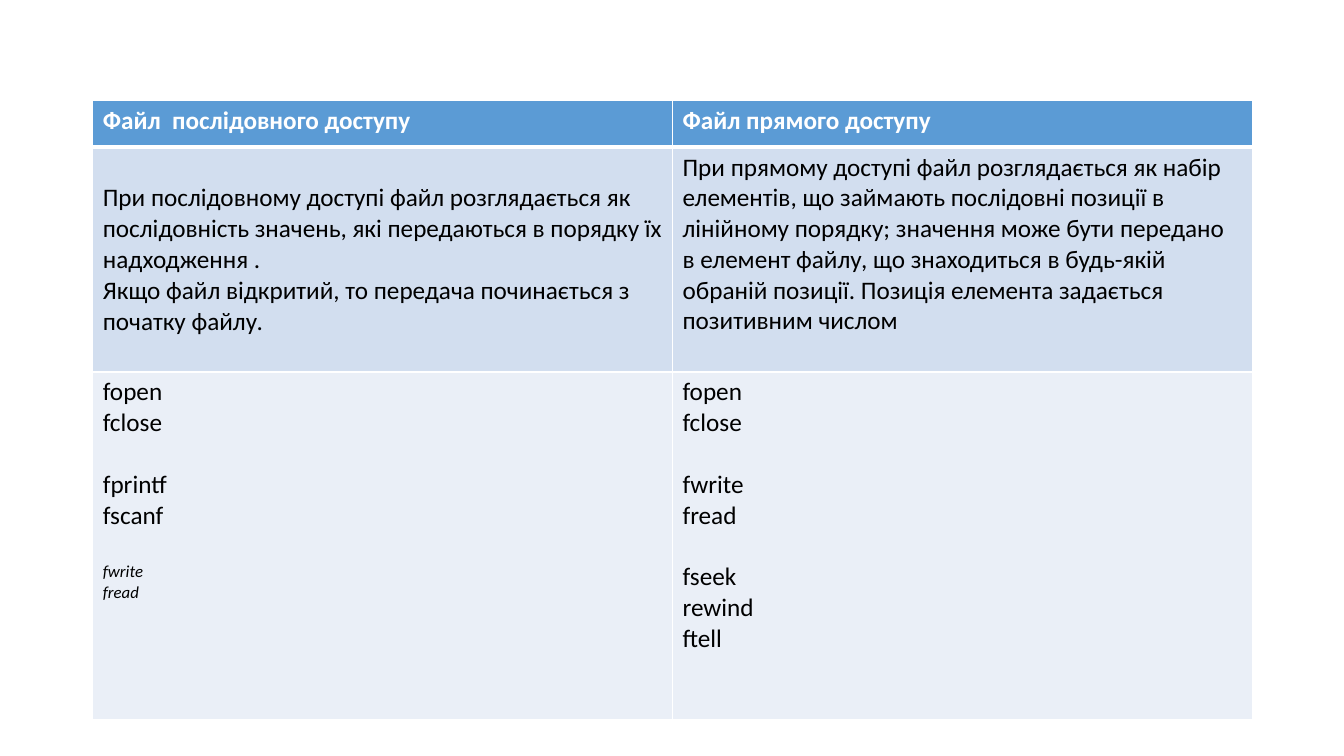
import pptx
import pptx.dml.color
import pptx.oxml
import pptx.oxml.ns
import pptx.util
from pptx.util import Inches

HEADINGS = ["Файл  послідовного доступу", "Файл прямого доступу"]
DESCRIPTIONS = [
    [["При послідовному доступі файл розглядається як послідовність значень, "
      "які передаються в порядку їх надходження .",
      "Якщо файл відкритий, то передача починається з початку файлу."]],
    [["При прямому доступі файл розглядається як набір елементів, що займають "
      "послідовні позиції в лінійному порядку; значення може бути передано в "
      "елемент файлу, що знаходиться в будь-якій обраній позиції. Позиція "
      "елемента задається позитивним числом"]],
]
FUNCTIONS = [
    [["fopen", "fclose"], ["fprintf", "fscanf"], ["fwrite", "fread"]],
    [["fopen", "fclose"], ["fwrite", "fread"], ["fseek", "rewind", "ftell"]],
]
ROWS = [
    ([[[heading]] for heading in HEADINGS], 0.46, "5B9BD5"),
    (DESCRIPTIONS, 2.23, "D2DEEF"),
    (FUNCTIONS, 3.45, "EAEFF7"),
]
LEFT, TOP, COLUMN_WIDTH = 0.92, 1, 5.75
LINE_GAP = 22


def rgb(value):
    return pptx.dml.color.RGBColor.from_string(value)


def write(paragraph, text, size=18, color="000000", bold=False, italic=False, before=0):
    paragraph.space_before = pptx.util.Pt(before)
    run = paragraph.add_run()
    run.text = text
    run.font.name = "Calibri"
    run.font.size = pptx.util.Pt(size)
    run.font.color.rgb = rgb(color)
    run.font.bold = bold
    run.font.italic = italic


def set_borders(cell, widths, color="FFFFFF"):
    properties = cell._tc.get_or_add_tcPr()
    for side, width in widths.items():
        properties.append(pptx.oxml.parse_xml(
            f'<a:ln{side} {pptx.oxml.ns.nsdecls("a")} w="{pptx.util.Pt(width)}">'
            f'<a:solidFill><a:srgbClr val="{color}"/></a:solidFill></a:ln{side}>'))


def write_groups(cell, groups, header, small_group):
    frame = cell.text_frame
    frame.word_wrap = True
    paragraph = frame.paragraphs[0]
    for group_index, group in enumerate(groups):
        small = group_index == small_group
        for line_index, line in enumerate(group):
            if group_index or line_index:
                paragraph = frame.add_paragraph()
            write(paragraph, line, size=12 if small else 18,
                  color="FFFFFF" if header else "000000", bold=header, italic=small,
                  before=LINE_GAP if group_index and not line_index else 0)


def main():
    deck = pptx.Presentation()
    deck.slide_width, deck.slide_height = Inches(13.33), Inches(7.5)
    slide = deck.slides.add_slide(deck.slide_layouts[6])
    access_table = slide.shapes.add_table(
        len(ROWS), len(HEADINGS), Inches(LEFT), Inches(TOP),
        Inches(COLUMN_WIDTH * len(HEADINGS)),
        Inches(sum(height for _, height, _ in ROWS))).table
    access_table.first_row = access_table.horz_banding = False
    for column in access_table.columns:
        column.width = Inches(COLUMN_WIDTH)

    for row_index, (contents, height, fill) in enumerate(ROWS):
        access_table.rows[row_index].height = Inches(height)
        for column_index, groups in enumerate(contents):
            cell = access_table.cell(row_index, column_index)
            set_borders(cell, {"L": 1, "R": 1, "T": 3 if row_index == 1 else 1,
                               "B": 3 if row_index == 0 else 1})
            cell.fill.solid()
            cell.fill.fore_color.rgb = rgb(fill)
            sequential_functions = contents is FUNCTIONS and column_index == 0
            write_groups(cell, groups, row_index == 0, 2 if sequential_functions else None)
    access_table.cell(1, 0).margin_top = Inches(0.05) + pptx.util.Pt(LINE_GAP)
    deck.save("out.pptx")


if __name__ == "__main__":
    main()
